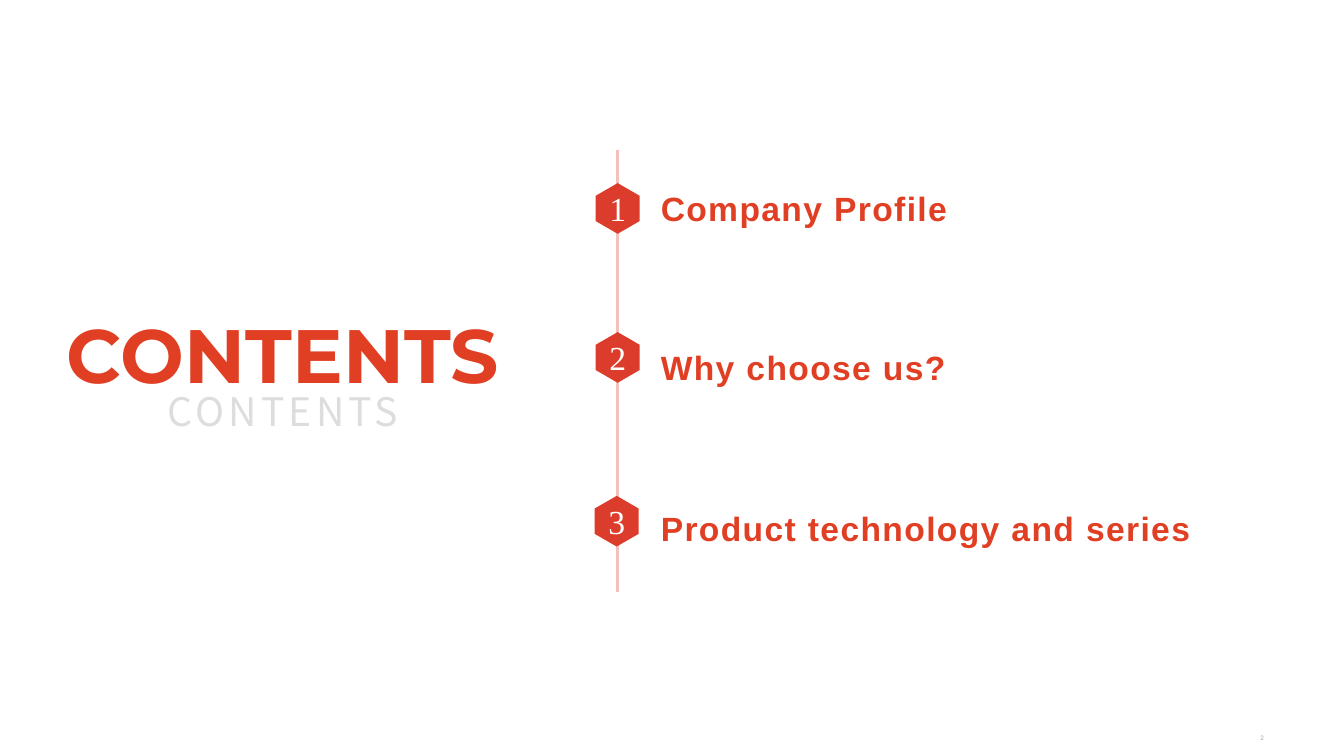
import pptx
import pptx.util
import pptx.dml.color
import pptx.enum.shapes
import pptx.enum.text
import pptx.oxml

Pt = pptx.util.Pt
RGBColor = pptx.dml.color.RGBColor
PP_ALIGN = pptx.enum.text.PP_ALIGN

ORANGE_RED = RGBColor(0xE0, 0x3F, 0x24)
HEXAGON_RED = RGBColor(0xDC, 0x3C, 0x2B)
PALE_RED = RGBColor(0xF4, 0xC0, 0xBA)
LIGHT_GREY = RGBColor(0xDD, 0xDD, 0xDD)
NUMBER_GREY = RGBColor(0xA6, 0xA6, 0xA6)
WHITE = RGBColor(0xFF, 0xFF, 0xFF)


def write(shape, text, font_name, size, color, align, bold=False, spacing=0, wrap=True):
    frame = shape.text_frame
    frame.word_wrap = wrap
    frame.auto_size = pptx.enum.text.MSO_AUTO_SIZE.NONE
    frame.vertical_anchor = pptx.enum.text.MSO_ANCHOR.MIDDLE
    paragraph = frame.paragraphs[0]
    paragraph.alignment = align
    run = paragraph.add_run()
    run.text = text
    run.font.name = font_name
    run.font.size = Pt(size)
    run.font.bold = bold
    run.font.color.rgb = color
    properties = run.font._element
    properties.set("spc", str(spacing * 100))
    east_asian = pptx.oxml.parse_xml(
        '<a:ea xmlns:a="http://schemas.openxmlformats.org/drawingml/2006/main" '
        f'typeface="{font_name}"/>')
    properties.append(east_asian)


deck = pptx.Presentation()
deck.slide_width = Pt(960)
deck.slide_height = Pt(540)
slide = deck.slides.add_slide(deck.slide_layouts[5])
shapes = slide.shapes

page_number = shapes.add_textbox(Pt(689.8), Pt(512.6), Pt(216), Pt(28.8))
page_number.text_frame.margin_left = page_number.text_frame.margin_right = Pt(2.9)
page_number.text_frame.margin_top = page_number.text_frame.margin_bottom = Pt(1.4)
write(page_number, "2", "Calibri", 5, NUMBER_GREY, PP_ALIGN.RIGHT)

timeline = shapes.add_connector(
    pptx.enum.shapes.MSO_CONNECTOR.STRAIGHT, Pt(441.2), Pt(107.3), Pt(441.2), Pt(423.2))
timeline.line.color.rgb = PALE_RED
timeline.line.width = Pt(2)
timeline._element.spPr.append(pptx.oxml.parse_xml(
    '<a:effectLst xmlns:a="http://schemas.openxmlformats.org/drawingml/2006/main"/>'))

title = shapes.title
title.left, title.top, title.width, title.height = Pt(22), Pt(214), Pt(360), Pt(76)
write(title, "CONTENTS", "Montserrat", 54, ORANGE_RED, PP_ALIGN.CENTER, bold=True)

subtitle = shapes.add_textbox(Pt(102), Pt(262.5), Pt(200), Pt(62))
write(subtitle, "CONTENTS", "Noto Sans CJK SC", 28, LIGHT_GREY, PP_ALIGN.CENTER,
      spacing=3, wrap=False)

chapters = [
    ("Company Profile", 127.4, 314.6, 42.5, 441.2, 148.9),
    ("Why choose us?", 230.8, 420.5, 63.4, 441.2, 255.3),
    ("Product technology and series", 347.8, 503.3, 59, 440.5, 372.3),
]
HALF_WIDTH, HALF_HEIGHT, SHOULDER = 15.7, 18.1, 9.05

for number, (heading, top, width, height, center_x, center_y) in enumerate(chapters, 1):
    chapter = shapes.add_textbox(Pt(457.6), Pt(top), Pt(width), Pt(height))
    chapter.text_frame.margin_left = Pt(14.4)
    write(chapter, heading, "Arial", 24, ORANGE_RED, PP_ALIGN.LEFT, bold=True, spacing=1)

    corners = [(0, -HALF_HEIGHT), (HALF_WIDTH, -SHOULDER), (HALF_WIDTH, SHOULDER),
               (0, HALF_HEIGHT), (-HALF_WIDTH, SHOULDER), (-HALF_WIDTH, -SHOULDER)]
    outline = [(Pt(center_x + dx), Pt(center_y + dy)) for dx, dy in corners]
    builder = shapes.build_freeform(*outline[0])
    builder.add_line_segments(outline[1:], close=True)
    hexagon = builder.convert_to_shape()
    hexagon.shadow.inherit = False
    hexagon.fill.solid()
    hexagon.fill.fore_color.rgb = HEXAGON_RED
    hexagon.line.fill.background()
    write(hexagon, str(number), "Times New Roman", 24, WHITE, PP_ALIGN.CENTER)

deck.save("out.pptx")
